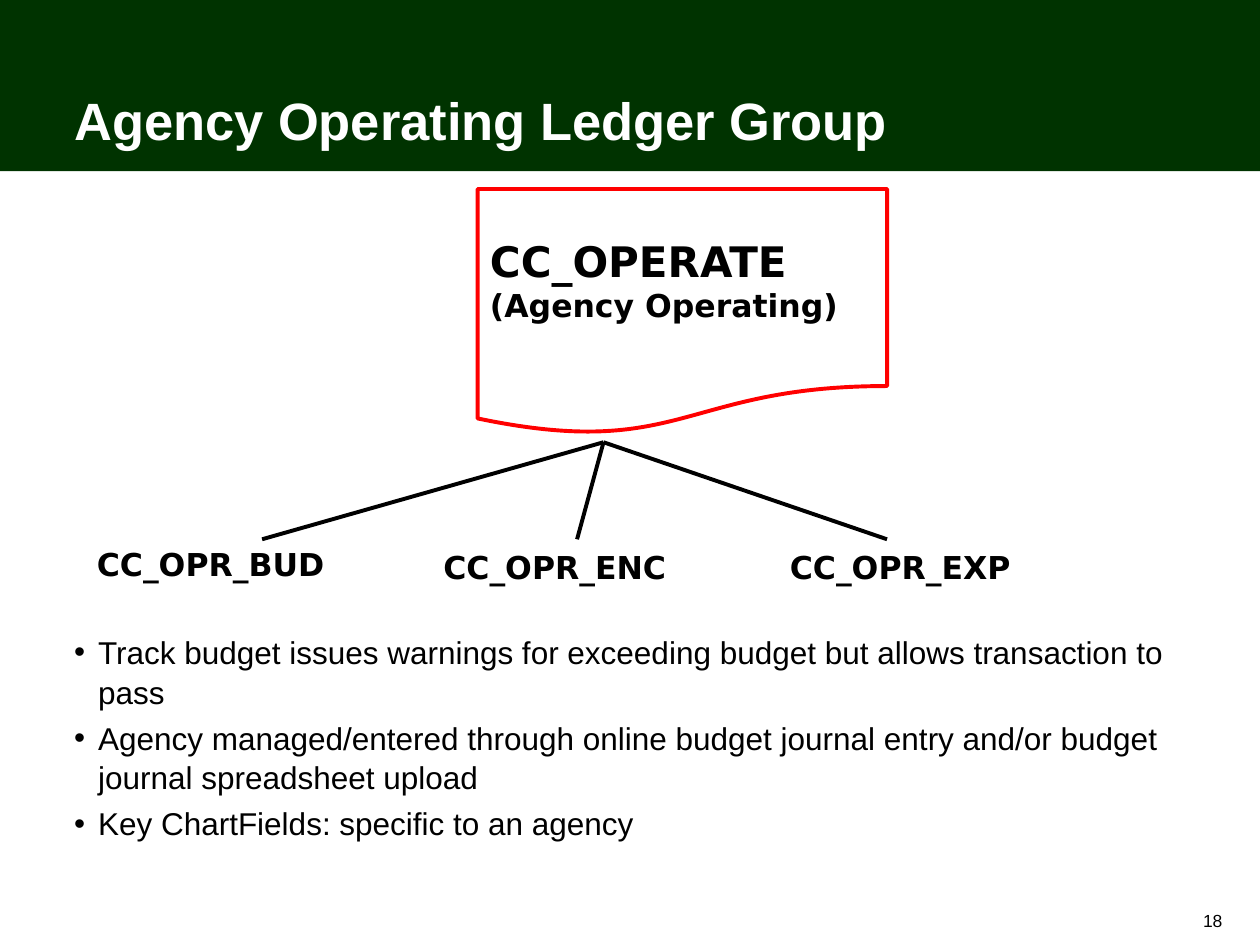
from dataclasses import dataclass
from typing import Any

from lxml import etree
from pptx import Presentation
from pptx.dml.color import RGBColor
from pptx.enum import shapes, text
from pptx.oxml import ns
from pptx.util import Inches, Pt


def hue(code):
    """Turn a hex string into a colour."""
    return RGBColor.from_string(code)


def cell(count):
    """Turn grid columns or rows, ten to the inch, into a length."""
    return Inches(count / 10)


@dataclass
class Deck:
    """Hold the style and the current slide."""

    page: Any
    body: str = "Arial"
    code: str = "DejaVu Sans"
    ink: str = "000000"
    pale: str = "FFFFFF"
    green: str = "003300"
    red: str = "FF0000"
    rule: float = 2.25

    def block(self, kind, box, fill=None, edge=None):
        """Draw a preset shape with an optional fill and outline."""
        item = self.page.shapes.add_shape(kind, *map(cell, box))
        item.shadow.inherit = False
        if fill:
            item.fill.solid()
            item.fill.fore_color.rgb = hue(fill)
        else:
            item.fill.background()
        if edge:
            item.line.color.rgb = hue(edge)
            item.line.width = Pt(self.rule)
        else:
            item.line.fill.background()

    def words(self, box, rows, font, tint=None, bold=False, anchor="TOP", align="LEFT"):
        """Write one paragraph for each pair of wording and size."""
        frame = self.page.shapes.add_textbox(*map(cell, box)).text_frame
        frame.word_wrap = True
        frame.vertical_anchor = text.MSO_ANCHOR[anchor]
        for spot, (line, size) in enumerate(rows):
            para = frame.add_paragraph() if spot else frame.paragraphs[0]
            para.alignment = text.PP_ALIGN[align]
            run = para.add_run()
            run.text = line
            run.font.name = font
            run.font.size = Pt(size)
            run.font.bold = bold
            run.font.color.rgb = hue(tint or self.ink)
        return frame

    def list(self, box, lines, size):
        """Write a bulleted list with hanging indents."""
        frame = self.words(box, [(line, size) for line in lines], self.body)
        for spot, para in enumerate(frame.paragraphs):
            para.line_spacing = 1.05
            if spot:
                para.space_before = Pt(size / 5)
            props = para._p.get_or_add_pPr()
            props.set("marL", str(cell(1.9)))
            props.set("indent", str(cell(-1.9)))
            etree.SubElement(props, ns.qn("a:buFont"), typeface=self.body)
            etree.SubElement(props, ns.qn("a:buChar"), char="•")

    def link(self, start, end):
        """Draw a straight line between two grid points."""
        ends = map(cell, (*start, *end))
        item = self.page.shapes.add_connector(shapes.MSO_CONNECTOR.STRAIGHT, *ends)
        item.line.color.rgb = hue(self.ink)
        item.line.width = Pt(self.rule)
        etree.SubElement(item._element.spPr, ns.qn("a:effectLst"))


def main():
    """Build the ledger group slide."""
    show = Presentation()
    show.slide_width, show.slide_height = cell(100), cell(75)
    deck = Deck(show.slides.add_slide(show.slide_layouts[6]))
    kinds = shapes.MSO_SHAPE

    deck.block(kinds.RECTANGLE, (0, 0, 100, 13.6), fill=deck.green)
    deck.words((4.9, 0, 68.7, 12.5), [("Agency Operating Ledger Group", 30)],
               deck.body, deck.pale, bold=True, anchor="BOTTOM")

    deck.block(kinds.FLOWCHART_DOCUMENT, (37.9, 15, 32.5, 19.5), edge=deck.red)
    group = [("CC_OPERATE", 24), ("(Agency Operating)", 18)]
    deck.words((37.9, 18.2, 32.5, 9.7), group, deck.code, bold=True)

    ledgers = [("BUD", 42.8, 20.8), ("ENC", 43, 45.8), ("EXP", 43, 70.4)]
    for col, (name, top, tip) in enumerate(ledgers):
        deck.words((6.7 + 27.5 * col, top, 27.5, 4), [(f"CC_OPR_{name}", 18)],
                   deck.code, bold=True)
        deck.link((47.9, 35.1), (tip, 42.8))

    notes = [
        "Track budget issues warnings for exceeding budget but allows transaction to pass",
        "Agency managed/entered through online budget journal entry and/or budget "
        "journal spreadsheet upload",
        "Key ChartFields: specific to an agency",
    ]
    deck.list((4.9, 49.6, 91.3, 19.5), notes, 18)
    deck.words((79.5, 71.4, 18.5, 3), [("18", 10)], deck.body,
               anchor="BOTTOM", align="RIGHT")
    show.save("out.pptx")


if __name__ == "__main__":
    main()
